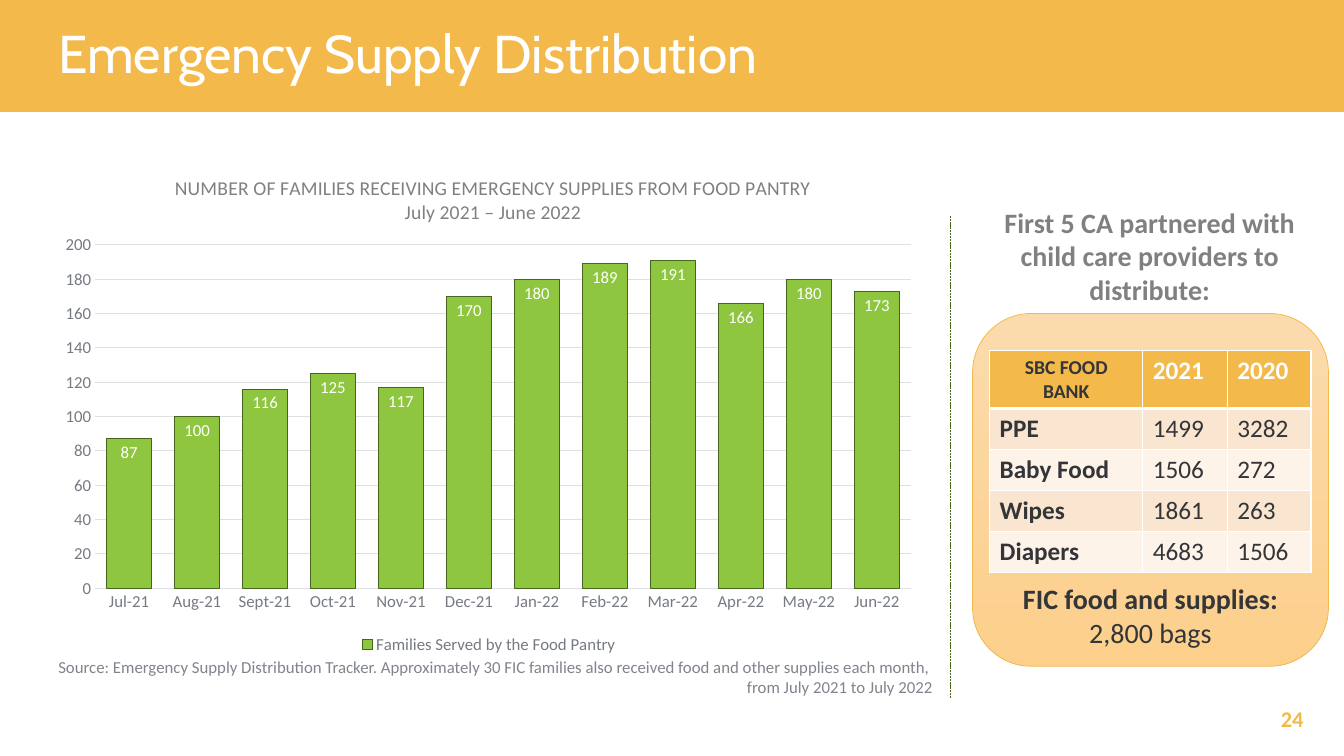
from lxml import etree
from pptx import Presentation, util as u
from pptx.chart import data as cd
from pptx.dml import color as dc
from pptx.enum import chart as ec, dml, shapes, text
from pptx.oxml import parse_xml
from pptx.oxml.ns import nsdecls, qn

Cm, Pt = u.Cm, u.Pt
THEME = dict(
    gold="F3B94A", green="8EC63F", dark_green="47651E", white="FFFFFF",
    ink="333539", grey="808080", axis="757A83", source="80848D", grid="DFE0E3",
    panel=("FBDBAD", "FCCF8B"), bands=("FAE6D0", "FDF3E9"),
    title=38, lead=20, body=18, page=16, small=14, note=12,
)
AL, ANC = text.PP_ALIGN, text.MSO_ANCHOR


def style(font, size, color, bold=False, name="Calibri"):
    fmt = dict(name=name, size=Pt(THEME[size]), bold=bold)
    for key, value in fmt.items():
        setattr(font, key, value)
    font.color.rgb = dc.RGBColor.from_string(THEME[color])


def write(tf, lines, anchor=ANC.TOP):
    """Fill a text frame; each line is (text, alignment, font format)."""
    tf.word_wrap = True
    tf.vertical_anchor = anchor
    for i, (words, align, fmt) in enumerate(lines):
        p = tf.add_paragraph() if i else tf.paragraphs[0]
        p.alignment = align
        r = p.add_run()
        r.text = words
        style(r.font, **fmt)


rgb = dc.RGBColor.from_string
prs = Presentation()
prs.slide_width, prs.slide_height = Cm(33.87), Cm(19.05)
s = prs.slides.add_slide(prs.slide_layouts[6])

# Title band
band = s.shapes.add_shape(shapes.MSO_SHAPE.RECTANGLE, 0, 0, prs.slide_width, Cm(2.82))
band.shadow.inherit = False
band.fill.solid()
band.fill.fore_color.rgb = rgb(THEME["gold"])
band.line.fill.background()

# Chart of families served
data = cd.CategoryChartData()
data.categories = ["Jul-21", "Aug-21", "Sept-21", "Oct-21", "Nov-21", "Dec-21",
                   "Jan-22", "Feb-22", "Mar-22", "Apr-22", "May-22", "Jun-22"]
data.add_series("Families Served by the Food Pantry",
                [87, 100, 116, 125, 117, 170, 180, 189, 191, 166, 180, 173])
chart = s.shapes.add_chart(ec.XL_CHART_TYPE.COLUMN_STACKED, Cm(1.22), Cm(3.81),
                           Cm(22.2), Cm(12.78), data).chart
style(chart.font, "note", "axis")
chart.has_title = True
write(chart.chart_title.text_frame, [
    (words, AL.CENTER, dict(size="small", color="grey")) for words in
    ("NUMBER OF FAMILIES RECEIVING EMERGENCY SUPPLIES FROM FOOD PANTRY",
     "July 2021 – June 2022")])
chart.has_legend = True
chart.legend.position = ec.XL_LEGEND_POSITION.BOTTOM
chart.legend.include_in_layout = False
style(chart.legend.font, "note", "axis")

cat, val = chart.category_axis, chart.value_axis
for axis in (cat, val):
    axis.major_tick_mark = axis.minor_tick_mark = ec.XL_TICK_MARK.NONE
    style(axis.tick_labels.font, "note", "axis")
for key, value in dict(minimum_scale=0, maximum_scale=200, major_unit=20).items():
    setattr(val, key, value)
val.format.line.fill.background()
for line in (cat.format.line, val.major_gridlines.format.line):
    line.color.rgb = rgb(THEME["grid"])
    line.width = Pt(0.75)

plot = chart.plots[0]
plot.gap_width, plot.overlap, plot.vary_by_categories = 50, 100, False
bars = plot.series[0]
bars.format.fill.solid()
bars.format.fill.fore_color.rgb = rgb(THEME["green"])
bars.format.line.color.rgb = rgb(THEME["dark_green"])
bars.format.line.width = Pt(0.75)
labels = bars.data_labels
for key, value in dict(show_value=True, position=ec.XL_LABEL_POSITION.INSIDE_END,
                       number_format="0", number_format_is_linked=False).items():
    setattr(labels, key, value)
style(labels.font, "note", "white")

# Fixed places for the chart title and the plot area, as shares of the chart
title_xml = chart.chart_title._element
plot_xml = title_xml.getparent().find(qn("c:plotArea"))
for parent, index, target, place in (
        (title_xml, 1, "", dict(x=0.14, y=0.04)),
        (plot_xml, 0, '<c:layoutTarget val="inner"/>',
         dict(x=0.053, y=0.185, w=0.926, h=0.677))):
    for old in parent.findall(qn("c:layout")):
        parent.remove(old)
    modes = "".join(f'<c:{k}Mode val="edge"/>' for k in "xy")
    sizes = "".join(f'<c:{k} val="{v}"/>' for k, v in place.items())
    parent.insert(index, parse_xml(
        f'<c:layout {nsdecls("c")}><c:manualLayout>{target}{modes}{sizes}'
        '</c:manualLayout></c:layout>'))

# Dashed divider
divider = s.shapes.add_connector(shapes.MSO_CONNECTOR.STRAIGHT,
                                 Cm(23.95), Cm(5.44), Cm(23.95), Cm(17.6))
divider.line.color.rgb = rgb(THEME["dark_green"])
divider.line.width = Pt(0.5)
divider.line.dash_style = dml.MSO_LINE.SQUARE_DOT
etree.SubElement(divider._element.spPr, qn("a:effectLst"))

# Rounded panel
panel = s.shapes.add_shape(shapes.MSO_SHAPE.ROUNDED_RECTANGLE,
                           Cm(24.51), Cm(7.9), Cm(8.97), Cm(8.89))
panel.shadow.inherit = False
panel.fill.gradient()
panel.fill.gradient_angle = 270
for stop, shade in zip(panel.fill.gradient_stops, THEME["panel"]):
    stop.color.rgb = rgb(shade)
panel.line.color.rgb = rgb(THEME["gold"])
panel.line.width = Pt(0.5)
panel.text_frame.margin_bottom = 0
write(panel.text_frame, [
    ("FIC food and supplies:", AL.CENTER, dict(size="lead", color="ink", bold=True)),
    ("2,800 bags", AL.CENTER, dict(size="lead", color="ink"))], ANC.BOTTOM)

# Food bank table
rows = [("SBC FOOD BANK", "2021", "2020"), ("PPE", "1499", "3282"),
        ("Baby Food", "1506", "272"), ("Wipes", "1861", "263"),
        ("Diapers", "4683", "1506")]
table = s.shapes.add_table(len(rows), 3, Cm(24.94), Cm(8.84), Cm(8.1), Cm(5.56)).table
for col, width in zip(table.columns, (3.86, 2.13, 2.11)):
    col.width = Cm(width)
for i, row in enumerate(rows):
    table.rows[i].height = Cm(1.03 if i else 1.44)
    for j, words in enumerate(row):
        cell = table.cell(i, j)
        corner, head = i == j == 0, i == 0
        write(cell.text_frame, [(words, AL.CENTER if corner else AL.LEFT, dict(
            size="small" if corner else "body",
            color="white" if head and j else "ink", bold=head or j == 0))])
        cell.fill.solid()
        cell.fill.fore_color.rgb = rgb(
            THEME["gold"] if head else THEME["bands"][(i - 1) % 2])
        for k, side in enumerate("LRTB"):
            heavy = (i, side) in ((0, "B"), (1, "T"))
            cell._tc.get_or_add_tcPr().insert(k, parse_xml(
                f'<a:ln{side} {nsdecls("a")} w="{Pt(3 if heavy else 1)}"><a:solidFill>'
                f'<a:srgbClr val="{THEME["white"]}"/></a:solidFill></a:ln{side}>'))

# Text boxes: title, page number, source note, heading of the panel
note = dict(size="note", color="source")
for place, anchor, lines in (
        ((1.22, 0.69, 31.34, 1.45), ANC.MIDDLE, [
            ("Emergency Supply Distribution", AL.LEFT,
             dict(size="title", color="white", name="Cabin"))]),
        ((25.48, 17.6, 7.62, 1.02), ANC.MIDDLE, [
            ("24", AL.RIGHT, dict(size="page", color="gold", bold=True))]),
        ((1.22, 16.43, 22.63, 1.27), ANC.TOP, [
            ("Source: Emergency Supply Distribution Tracker. Approximately 30 FIC "
             "families also received food and other supplies each month,", AL.LEFT, note),
            ("from July 2021 to July 2022 ", AL.RIGHT, note)]),
        ((24.71, 5.05, 8.53, 2.82), ANC.TOP, [
            ("First 5 CA partnered with child care providers to distribute:",
             AL.CENTER, dict(size="lead", color="grey", bold=True))])):
    tf = s.shapes.add_textbox(*map(Cm, place)).text_frame
    write(tf, lines, anchor)
    if lines[0][2]["size"] == "title":
        tf.paragraphs[0].line_spacing = 0.9

prs.save("out.pptx")
